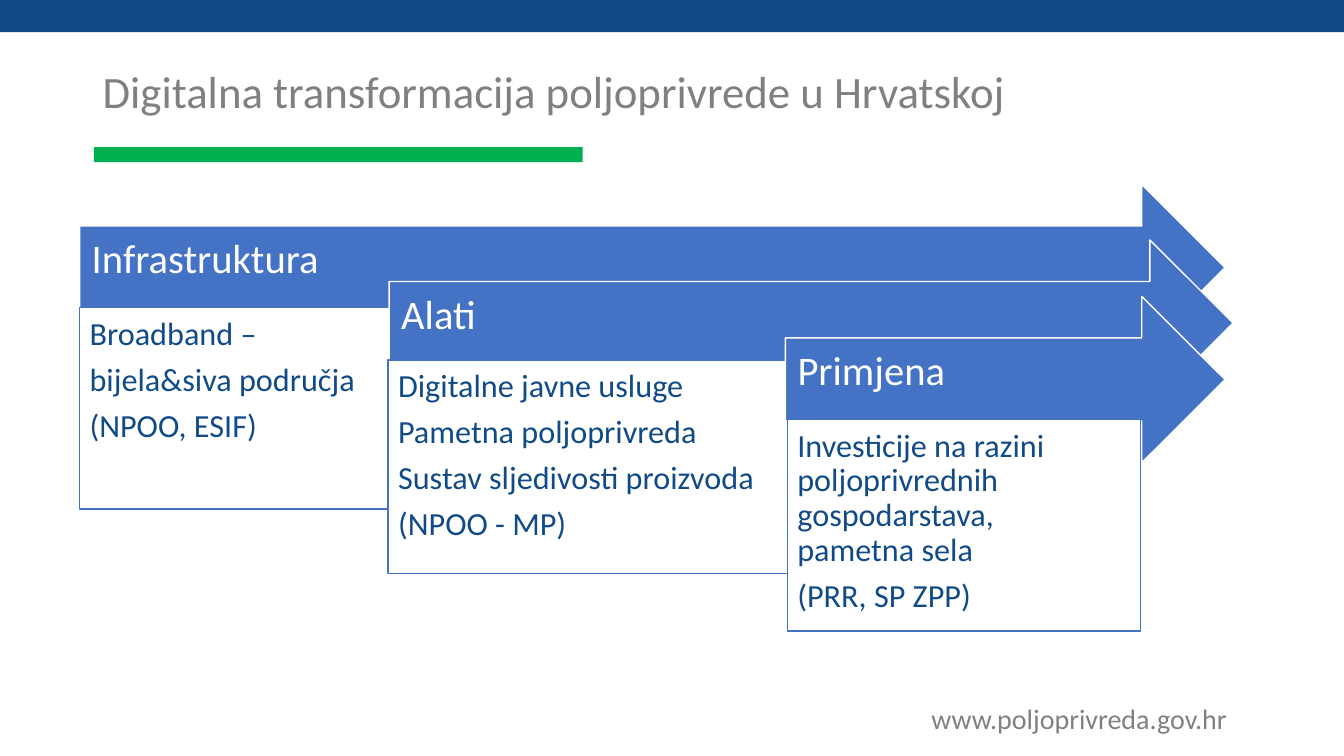
from dataclasses import dataclass

from pptx import Presentation
from pptx.dml.color import RGBColor as RGB
from pptx.enum.shapes import MSO_SHAPE as SHAPE
from pptx.enum.text import MSO_ANCHOR as ANCHOR, PP_ALIGN as ALIGN
from pptx.util import Inches, Pt


@dataclass(frozen=True)
class Theme:
    font: str = "Calibri"
    navy: RGB = RGB(0x11, 0x4B, 0x87)
    green: RGB = RGB(0x00, 0xB0, 0x50)
    blue: RGB = RGB(0x44, 0x72, 0xC4)
    gray: RGB = RGB(0x80, 0x80, 0x80)
    white: RGB = RGB(0xFF, 0xFF, 0xFF)
    title: int = 32
    heading: int = 29
    body: int = 23
    footer: int = 20


class SlideBuilder:
    def __init__(self, slide, theme):
        self.slide = slide
        self.theme = theme

    def add_text(self, sp, paragraphs, size, color, anchor=ANCHOR.TOP,
                 insets=(0.1, 0.05, 0.1, 0.05), spacing=0.9, after=0):
        """Fill sp with text; a newline inside a paragraph is a line break."""
        tf = sp.text_frame
        tf.word_wrap = True
        tf.vertical_anchor = anchor
        (tf.margin_left, tf.margin_top,
         tf.margin_right, tf.margin_bottom) = map(Inches, insets)
        for i, text in enumerate(paragraphs):
            p = tf.add_paragraph() if i else tf.paragraphs[0]
            p.alignment = ALIGN.LEFT
            p.line_spacing = spacing
            p.space_after = Pt(after)
            for j, line in enumerate(text.split("\n")):
                if j:
                    p.add_line_break()
                r = p.add_run()
                r.text = line
                r.font.name = self.theme.font
                r.font.size = Pt(size)
                r.font.color.rgb = color

    def shape(self, kind, box, fill, line=None):
        sp = self.slide.shapes.add_shape(kind, *map(Inches, box))
        sp.shadow.inherit = False
        sp.fill.solid()
        sp.fill.fore_color.rgb = fill
        if line is None:
            sp.line.fill.background()
        else:
            sp.line.color.rgb = line
            sp.line.width = Pt(1)
        return sp

    def label(self, box, text, size, **style):
        sp = self.slide.shapes.add_textbox(*map(Inches, box))
        self.add_text(sp, [text], size, self.theme.gray, **style)

    def arrow(self, box, heading):
        t = self.theme
        sp = self.shape(SHAPE.RIGHT_ARROW, box, t.blue, t.white)
        self.add_text(sp, [heading], t.heading, t.white, ANCHOR.MIDDLE,
                      insets=(0.12, 0.12, 0.28, 0.26))

    def details(self, box, paragraphs):
        t = self.theme
        sp = self.shape(SHAPE.RECTANGLE, box, t.white, t.blue)
        self.add_text(sp, paragraphs, t.body, t.navy, insets=(0.1,) * 4,
                      after=0.35 * t.body)


STAGES = [
    ("Infrastruktura", (0.79, 1.83, 11.36, 1.65), (0.79, 3.05, 3.5, 2),
     ["Broadband –", "bijela&siva područja", "(NPOO, ESIF)"]),
    ("Alati", (3.86, 2.38, 8.37, 1.65), (3.85, 3.57, 3.96, 2.12),
     ["Digitalne javne usluge", "Pametna poljoprivreda",
      "Sustav sljedivosti proizvoda", "(NPOO - MP)"]),
    ("Primjena", (7.79, 2.94, 4.36, 1.65), (7.81, 4.16, 3.5, 2.1),
     ["Investicije na razini poljoprivrednih gospodarstava,\npametna sela",
      "(PRR, SP ZPP)"]),
]


def main():
    prs = Presentation()
    prs.slide_width, prs.slide_height = Inches(13.33), Inches(7.5)
    theme = Theme()
    s = SlideBuilder(prs.slides.add_slide(prs.slide_layouts[6]), theme)

    s.shape(SHAPE.RECTANGLE, (0.93, 1.46, 4.85, 0.15), theme.green)
    s.shape(SHAPE.RECTANGLE, (0, 0, 13.33, 0.32), theme.navy)
    s.label((9.14, 6.91, 3.28, 0.44), "www.poljoprivreda.gov.hr",
            theme.footer, spacing=1.0)
    s.label((0.92, 0.4, 11.5, 1.06),
            "Digitalna transformacija poljoprivrede u Hrvatskoj",
            theme.title, anchor=ANCHOR.MIDDLE)
    for heading, arrow_box, details_box, paragraphs in STAGES:
        s.arrow(arrow_box, heading)
        s.details(details_box, paragraphs)

    prs.save("out.pptx")


if __name__ == "__main__":
    main()
